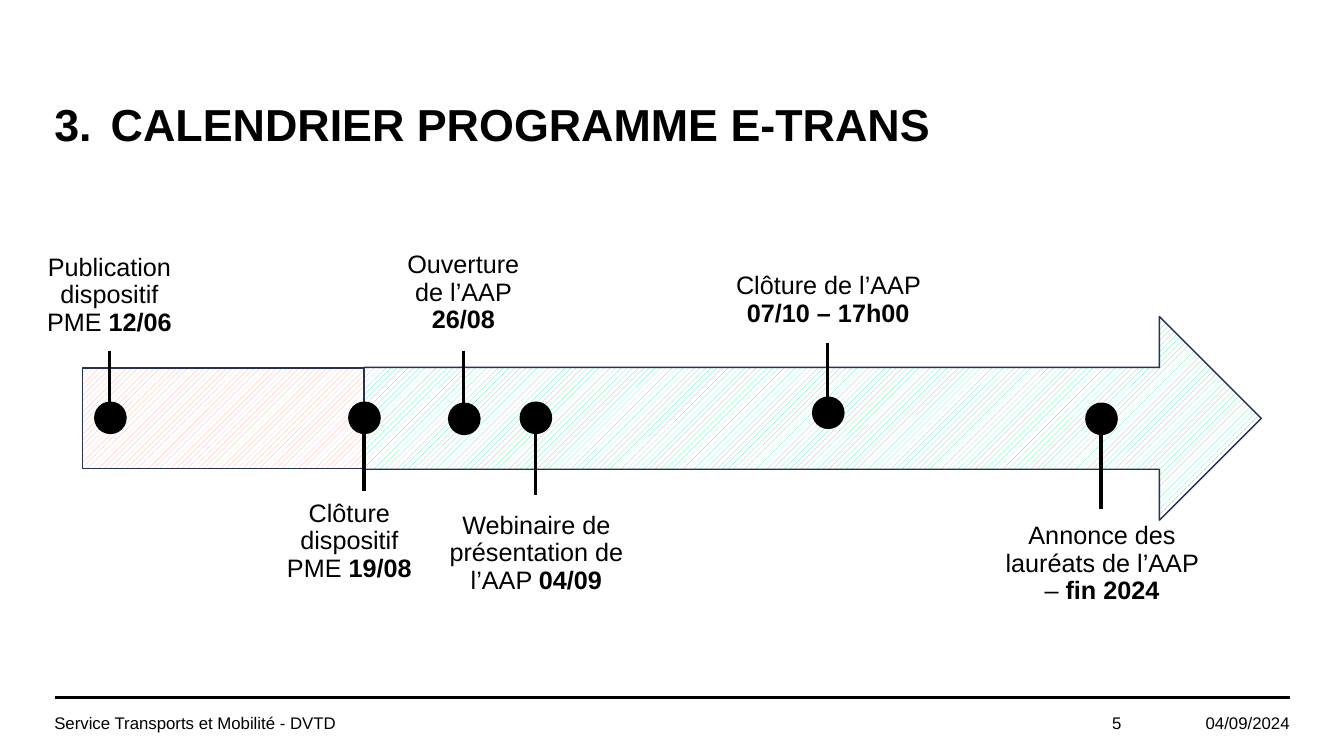
import pptx
import pptx.util
import pptx.dml.color
import pptx.enum.dml
import pptx.enum.shapes
import pptx.enum.text
import pptx.oxml.ns
import lxml.etree

PX = 9144
COLORS = {"ink": "000000", "paper": "FFFFFF", "outline": "263153",
          "green": "50E6A6", "coral": "FFA994"}
SHAPE = pptx.enum.shapes.MSO_SHAPE
ALIGN = pptx.enum.text.PP_ALIGN
TOP = pptx.enum.text.MSO_ANCHOR.TOP
MIDDLE = pptx.enum.text.MSO_ANCHOR.MIDDLE
BOTTOM = pptx.enum.text.MSO_ANCHOR.BOTTOM


def rgb(name):
    return pptx.dml.color.RGBColor.from_string(COLORS[name])


def add_run(p, text, size=18, bold=False, color="ink", font="Arial"):
    r = p.add_run()
    r.text = text
    r.font.name = font
    r.font.size = pptx.util.Pt(size)
    r.font.bold = bold
    r.font.color.rgb = rgb(color)


class Deck:
    def __init__(self, width, height):
        self.prs = pptx.Presentation()
        self.prs.slide_width = width * PX
        self.prs.slide_height = height * PX
        self.s = self.prs.slides.add_slide(self.prs.slide_layouts[6])

    def text(self, box, runs, anchor=MIDDLE, align=ALIGN.LEFT, inset=(10, 5),
             spacing=1.0, size=12):
        sp = self.s.shapes.add_textbox(*(v * PX for v in box))
        tf = sp.text_frame
        tf.word_wrap = True
        tf.vertical_anchor = anchor
        tf.margin_left = tf.margin_right = inset[0] * PX
        tf.margin_top = tf.margin_bottom = inset[1] * PX
        p = tf.paragraphs[0]
        p.alignment = align
        p.line_spacing = spacing
        for text, bold in runs:
            add_run(p, text, size=size, bold=bold)
        return p

    def numbered(self, p, start, indent):
        pPr = p._p.get_or_add_pPr()
        pPr.set("marL", str(indent * PX))
        pPr.set("indent", str(-indent * PX))
        lxml.etree.SubElement(pPr, pptx.oxml.ns.qn("a:buAutoNum"),
                              type="arabicPeriod", startAt=str(start))

    def line(self, start, end, weight):
        kind = pptx.enum.shapes.MSO_CONNECTOR.STRAIGHT
        sp = self.s.shapes.add_connector(kind, *(v * PX for v in start + end))
        sp.line.color.rgb = rgb("ink")
        sp.line.width = pptx.util.Pt(weight)
        lxml.etree.SubElement(sp._element.spPr, pptx.oxml.ns.qn("a:effectLst"))

    def shape(self, kind, box, fill="ink", outline="ink", hatched=False):
        sp = self.s.shapes.add_shape(kind, *(v * PX for v in box))
        sp.shadow.inherit = False
        if hatched:
            sp.fill.patterned()
            sp.fill.pattern = pptx.enum.dml.MSO_PATTERN.WIDE_UPWARD_DIAGONAL
            sp.fill.fore_color.rgb = rgb(fill)
            sp.fill.back_color.rgb = rgb("paper")
        else:
            sp.fill.solid()
            sp.fill.fore_color.rgb = rgb(fill)
        sp.line.color.rgb = rgb(outline)
        sp.line.width = pptx.util.Pt(1)
        return sp


MILESTONES = [
    ("Publication dispositif PME ", "12/06", (23, 236, 171, 112), BOTTOM, 109, 348, 415, 399),
    ("Clôture dispositif PME\u00a0", "19/08", (261, 479, 171, 113), BOTTOM, 361, 414, 487, 399),
    ("Ouverture de l’AAP ", "26/08", (374, 236, 171, 112), TOP, 460, 348, 415, 400),
    ("Webinaire de présentation de l’AAP ", "04/09", (429, 491, 206, 113), BOTTOM, 531, 431, 491, 399),
    ("Clôture de l’AAP ", "07/10 – 17h00", (710, 251, 223, 88), BOTTOM, 821, 340, 410, 394),
    ("Annonce des lauréats de l’AAP – ", "fin 2024", (977, 505, 232, 130), TOP, 1092, 432, 505, 400),
]
DOT = 31


def main():
    deck = Deck(1333, 750)
    deck.line((55, 692), (1279, 692), 1.5)
    deck.text((1164, 697, 125, 40), [("04/09/2024", False)], align=ALIGN.RIGHT)
    deck.text((44, 697, 447, 40), [("Service Transports et Mobilité - DVTD", False)])
    deck.text((1044, 697, 78, 40), [("5", False)], align=ALIGN.RIGHT)
    title = deck.text((44, 84, 1246, 71), [("CALENDRIER PROGRAMME E-TRANS", True)],
                      anchor=BOTTOM, spacing=0.9, size=32)
    deck.numbered(title, 3, 56)

    arrow = deck.shape(SHAPE.RIGHT_ARROW, (361, 314, 890, 202), "green", "outline", True)
    arrow.adjustments[0] = 0.5
    arrow.adjustments[1] = 0.5
    deck.shape(SHAPE.RECTANGLE, (82, 365, 279, 100), "coral", "outline", True)

    for label, date, box, anchor, x, top, bottom, dot_top in MILESTONES:
        deck.text(box, [(label, False), (date, True)], anchor=anchor,
                  align=ALIGN.CENTER, inset=(14, 14), spacing=0.9, size=18)
        deck.line((x, top), (x, bottom), 2.25)
        deck.shape(SHAPE.OVAL, (x - DOT // 2, dot_top, DOT, DOT))

    deck.prs.save("out.pptx")


if __name__ == "__main__":
    main()
